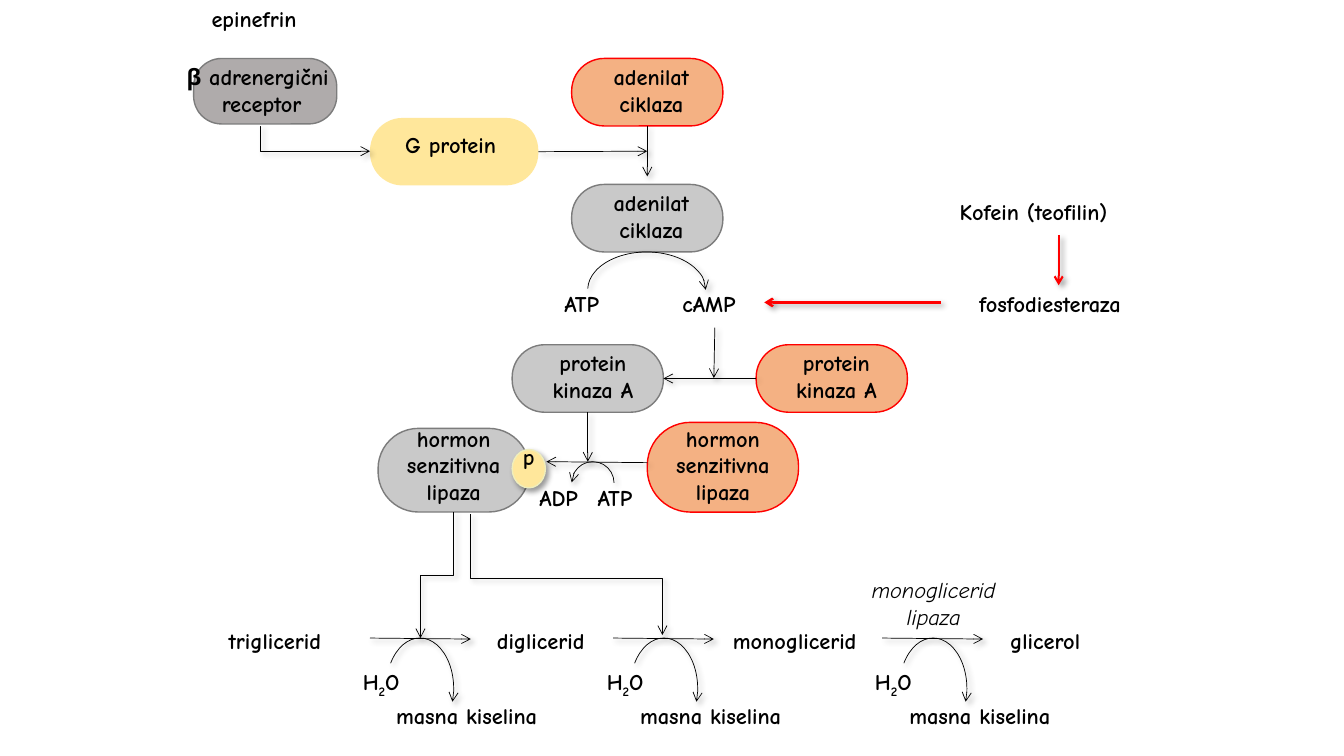
import pptx
import pptx.util
import pptx.dml.color
import pptx.enum.shapes
import pptx.enum.text
import pptx.oxml
import pptx.oxml.ns

Inches, Pt = pptx.util.Inches, pptx.util.Pt
RGB = pptx.dml.color.RGBColor.from_string
SHAPE = pptx.enum.shapes.MSO_SHAPE
CONNECTOR = pptx.enum.shapes.MSO_CONNECTOR
ALIGN = pptx.enum.text.PP_ALIGN
qn = pptx.oxml.ns.qn
NS = pptx.oxml.ns.nsdecls("a")
COLORS = {"black": "000000", "red": "FF0000", "edge": "7C7C7C", "receptor": "AFABAB",
          "active": "C9C9C9", "inactive": "F4B183", "yellow": "FFE79B", "cream": "EFEEBC"}


def text(shapes, at, content, bold=True, italic=False, align=ALIGN.LEFT, wrap=False, spacing=None):
    """Add a text box; each line is a paragraph, and _x_ marks a subscript."""
    tb = shapes.add_textbox(*map(Inches, at))
    tf = tb.text_frame
    tf.word_wrap = wrap
    tf.auto_size = pptx.enum.text.MSO_AUTO_SIZE.SHAPE_TO_FIT_TEXT
    for i, line in enumerate(content.split("\n")):
        p = tf.paragraphs[0] if i == 0 else tf.add_paragraph()
        p.alignment = align
        p.line_spacing = spacing
        for j, part in enumerate(line.split("_")):
            r = p.add_run()
            r.text = part
            r.font.name = "Comic Neue"
            r.font.size = Pt(16)
            r.font.bold = bold
            r.font.italic = italic
            r.font.color.rgb = RGB(COLORS["black"])
            if j % 2:
                r.font._element.set("baseline", "-25000")


def stroke(shape, color="black", width=0.5, end=None):
    """Set a line with a soft shadow and an optional arrowhead (headEnd or tailEnd)."""
    shape.line.color.rgb = RGB(COLORS[color])
    shape.line.width = Pt(width)
    spPr = shape._element.spPr
    if end:
        spPr.find(qn("a:ln")).append(pptx.oxml.parse_xml(f'<a:{end} {NS} type="arrow"/>'))
    spPr.append(pptx.oxml.parse_xml(
        f'<a:effectLst {NS}><a:outerShdw blurRad="50800" dist="38100" dir="2700000" algn="tl" '
        f'rotWithShape="0"><a:srgbClr val="{COLORS["black"]}"><a:alpha val="40000"/></a:srgbClr>'
        '</a:outerShdw></a:effectLst>'))


prs = pptx.Presentation()
prs.slide_width, prs.slide_height = Inches(13.33), Inches(7.5)
s = prs.slides.add_slide(prs.slide_layouts[6])

# Proteins: box, corner, fill, edge, text place, wording, wrap, line spacing
W, H = 1.5, 0.67
tight = Pt(19)
proteins = {
    "receptor": ((1.92, 0.58, 1.42, 0.65), 0.429, "receptor", "edge",
                 (1.67, 0.58, 1.85, 0.64), "β adrenergični \nreceptor", False, None),
    "g_protein": ((3.67, 1.17, 1.67, H), 0.482, "yellow", None,
                  (3.92, 1.25, 1.21, 0.37), "G protein", False, None),
    "cyclase_off": ((5.67, 0.58, W, H), 0.482, "inactive", "red",
                    (5.92, 0.58, 1.08, 0.63), "adenilat\nciklaza", True, tight),
    "cyclase_on": ((5.67, 1.83, W, H), 0.482, "active", "edge",
                   (5.92, 1.83, 1.08, 0.63), "adenilat\nciklaza", True, tight),
    "kinase_off": ((7.5, 3.42, W, H), 0.482, "inactive", "red",
                   (7.67, 3.42, 1.25, 0.63), "protein\nkinaza A", True, tight),
    "kinase_on": ((5.08, 3.42, W, H), 0.482, "active", "edge",
                  (5.17, 3.42, 1.42, 0.63), "protein\nkinaza A", True, tight),
    "lipase_off": ((6.42, 4.19, W, 0.89), 0.482, "inactive", "red",
                   (6.42, 4.17, W, 0.9), "hormon senzitivna lipaza", True, tight),
    "lipase_on": ((3.75, 4.25, W, 0.83), 0.482, "active", "edge",
                  (3.75, 4.17, W, 0.9), "hormon senzitivna lipaza", True, tight),
}
boxes = {}
for name, (at, corner, fill, edge, text_at, wording, wrap, spacing) in proteins.items():
    group = s.shapes.add_group_shape()
    box = group.shapes.add_shape(SHAPE.ROUNDED_RECTANGLE, *map(Inches, at))
    box.adjustments[0] = corner
    box.shadow.inherit = False
    box.fill.solid()
    box.fill.fore_color.rgb = RGB(COLORS[fill])
    if edge:
        box.line.color.rgb = RGB(COLORS[edge])
        box.line.width = Pt(1)
    else:
        box.line.fill.background()
    text(group.shapes, text_at, wording, wrap=wrap, spacing=spacing,
         align=ALIGN.LEFT if name == "g_protein" else ALIGN.CENTER)
    boxes[name] = box

phosphate = group.shapes.add_shape(SHAPE.OVAL, Inches(5.08), Inches(4.46), Inches(0.33), Inches(0.38))
phosphate.fill.solid()
phosphate.fill.fore_color.rgb = RGB(COLORS["yellow"])
stroke(phosphate, "cream", 1)
text(group.shapes, (5.08, 4.35, 0.33, 0.37), "p", align=ALIGN.CENTER, wrap=True, spacing=tight)

# Straight arrows: from, to, arrowhead, colour, width, joined start, joined end
for x1, y1, x2, y2, end, color, width, start, stop in [
    (6.42, 1.25, 6.42, 1.75, "tailEnd", "black", 0.5, ("cyclase_off", 2), None),
    (5.33, 1.5, 6.42, 1.5, "tailEnd", "black", 0.5, ("g_protein", 3), None),
    (7.09, 3.25, 7.08, 3.75, "tailEnd", "black", 0.5, None, None),
    (6.58, 3.75, 7.5, 3.75, "headEnd", "black", 0.5, ("kinase_on", 3), ("kinase_off", 1)),
    (5.84, 4.08, 5.83, 4.58, "tailEnd", "black", 0.5, ("kinase_on", 2), None),
    (5.42, 4.58, 6.42, 4.59, "headEnd", "black", 0.5, None, None),
    (10.5, 2.33, 10.5, 2.83, "tailEnd", "red", 1.5, None, None),
    (7.58, 3, 9.33, 3, "headEnd", "red", 1.75, None, None),
]:
    c = s.shapes.add_connector(CONNECTOR.STRAIGHT, *map(Inches, (x1, y1, x2, y2)))
    if start:
        c.begin_connect(boxes[start[0]], start[1])
    if stop:
        c.end_connect(boxes[stop[0]], stop[1])
    stroke(c, color, width, end)

# Bent arrows: unrotated ends, rotation in degrees, place of the bend, joined start, joined end
for ends, turn, bend, start, stop in [
    ((2.58, 1.25, 3.67, 1.5), 0, 0.005, None, "g_protein"),
    ((3.71, 5.54, 4.96, 5.87), 90, 0.5, "lipase_on", None),
    ((6.22, 4.75, 5.02, 6.65), 270, 0.53, None, None),
]:
    c = s.shapes.add_connector(CONNECTOR.ELBOW, *map(Inches, ends))
    frame = c.left, c.top, c.width, c.height
    if start:
        c.begin_connect(boxes[start], 2)
    if stop:
        c.end_connect(boxes[stop], 1)
    c.left, c.top, c.width, c.height = frame
    spPr = c._element.spPr
    spPr.find(qn("a:xfrm")).set("rot", str(turn * 60000))
    spPr.find(qn("a:prstGeom")).find(qn("a:avLst")).append(
        pptx.oxml.parse_xml(f'<a:gd {NS} name="adj1" fmla="val {round(bend * 100000)}"/>'))
    stroke(c, end="tailEnd")

# Three hydrolysis steps: arrow start, arc, water
arcs = [((5.83, 2.5, 1.17, 0.75), 108.74, 0, "tailEnd"),
        ((5.67, 4.58, 0.42, 0.42), 108.74, 0, "headEnd")]
for arrow_x, arc_x, water_x in [(3.67, 3.83, 3.5), (6.08, 6.25, 5.92), (8.75, 8.92, 8.58)]:
    c = s.shapes.add_connector(CONNECTOR.STRAIGHT, Inches(arrow_x), Inches(6.33),
                               Inches(arrow_x + 1), Inches(6.34))
    stroke(c, end="tailEnd")
    arcs.append(((arc_x, 6.33, 0.67, 1), 132.39, 13.35, "tailEnd"))
    text(s.shapes, (water_x, 6.58, 0.64, 0.37), "H_2_O")
    text(s.shapes, (arc_x, 6.92, 1.73, 0.37), "masna kiselina")

for at, first, last, end in arcs:
    arc = s.shapes.add_shape(SHAPE.ARC, *map(Inches, at))
    arc.adjustments[0], arc.adjustments[1] = first, last
    arc.fill.background()
    stroke(arc, end=end)

for x, y, width, label in [
    (2, 0, 1.16, "epinefrin"),
    (5.5, 2.83, 0.64, "ATP"),
    (6.67, 2.83, 0.8, "cAMP"),
    (5.83, 4.75, 0.64, "ATP"),
    (5.25, 4.75, 0.65, "ADP"),
    (2.17, 6.17, 1.27, "triglicerid"),
    (4.83, 6.17, 1.19, "diglicerid"),
    (7.17, 6.17, 1.52, "monoglicerid"),
    (9.92, 6.17, 0.98, "glicerol"),
    (9.42, 1.92, 1.91, "Kofein (teofilin)"),
]:
    text(s.shapes, (x, y, width, 0.37), label)
text(s.shapes, (9.33, 2.83, 2.17, 0.37), "fosfodiesteraza", align=ALIGN.CENTER, wrap=True, spacing=tight)
text(s.shapes, (8.5, 5.67, 1.52, 0.64), "monoglicerid\nlipaza", bold=False, italic=True, align=ALIGN.CENTER)

prs.save("out.pptx")
